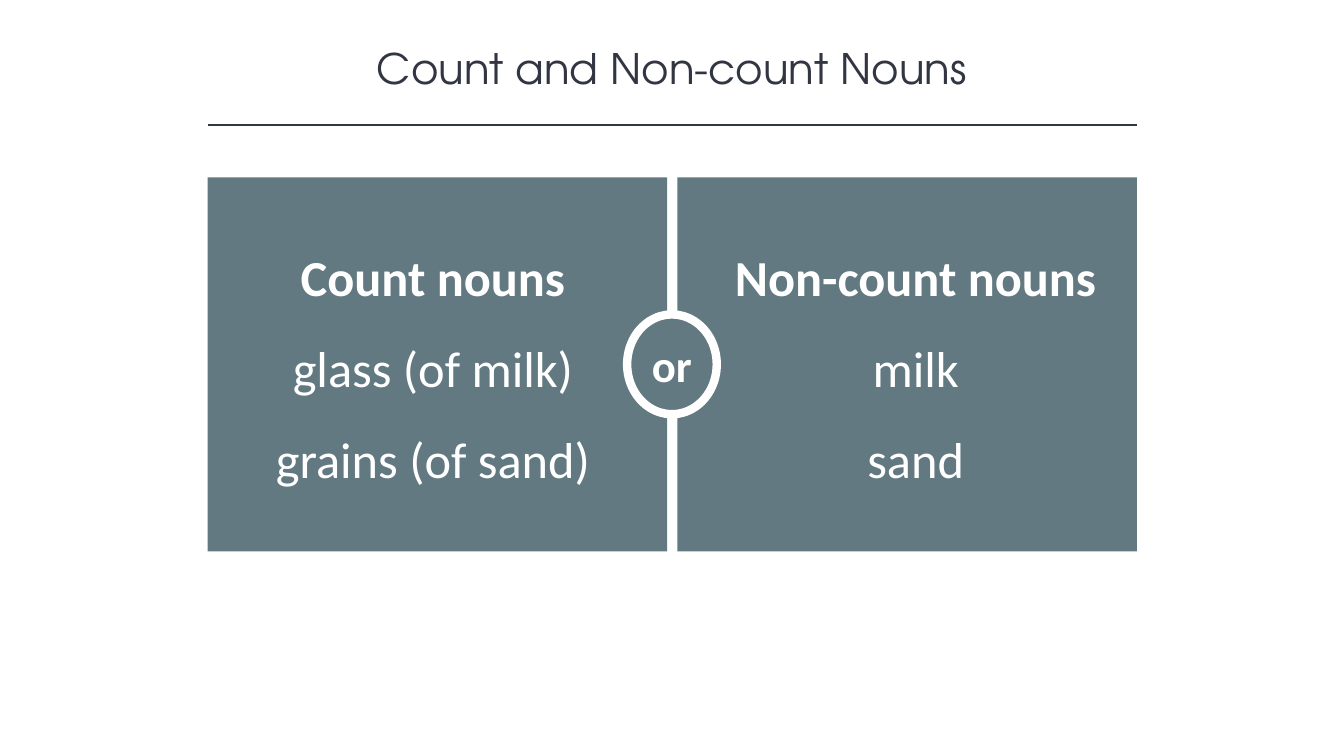
"""Build a slide that contrasts count nouns with non-count nouns."""
import pptx
import pptx.dml.color
import pptx.enum.shapes
import pptx.enum.text
import pptx.oxml
import pptx.oxml.ns
import pptx.util

Pt = pptx.util.Pt
RGBColor = pptx.dml.color.RGBColor
SHAPE = pptx.enum.shapes.MSO_SHAPE
MIDDLE = pptx.enum.text.MSO_ANCHOR.MIDDLE
CENTER = pptx.enum.text.PP_ALIGN.CENTER

INK = RGBColor(0x32, 0x35, 0x42)
SLATE = RGBColor(0x62, 0x79, 0x81)
WHITE = RGBColor(0xFF, 0xFF, 0xFF)

PANEL_LEFT, PANEL_TOP = 148.3, 126.7
PANEL_WIDTH, PANEL_HEIGHT = 328.3, 267.1
PANEL_STEP = 335.5
PANEL_RIGHT = PANEL_LEFT + PANEL_STEP + PANEL_WIDTH
RULE_TOP = 89.3


def write_lines(shape, lines, font_format, line_spacing=1.0):
    """Fill a shape with centred lines, the first one styled as a heading."""
    frame = shape.text_frame
    frame.word_wrap = True
    frame.vertical_anchor = MIDDLE
    frame.margin_left = frame.margin_right = 0
    frame.text = "\n".join(lines)
    for index, paragraph in enumerate(frame.paragraphs):
        paragraph.alignment = CENTER
        paragraph.line_spacing = line_spacing
        for name, value in font_format.items():
            if name == "color":
                paragraph.font.color.rgb = value
            else:
                setattr(paragraph.font, name, value)
        if index > 0:
            paragraph.font.bold = False


def add_filled_shape(shapes, preset, left, top, width, height):
    """Add a flat slate shape without an outline."""
    shape = shapes.add_shape(preset, Pt(left), Pt(top), Pt(width), Pt(height))
    shape.shadow.inherit = False
    shape.fill.solid()
    shape.fill.fore_color.rgb = SLATE
    shape.line.fill.background()
    return shape


presentation = pptx.Presentation()
presentation.slide_width = Pt(960)
presentation.slide_height = Pt(540)
slide = presentation.slides.add_slide(presentation.slide_layouts[6])

title = slide.shapes.add_textbox(Pt(120), Pt(26.6), Pt(720), Pt(44))
title_format = {"name": "TeX Gyre Adventor", "size": Pt(30), "bold": False, "color": INK}
write_lines(title, ["Count and Non-count Nouns"], title_format)

rule = slide.shapes.add_connector(
    pptx.enum.shapes.MSO_CONNECTOR.STRAIGHT,
    Pt(PANEL_LEFT), Pt(RULE_TOP), Pt(PANEL_RIGHT), Pt(RULE_TOP))
rule.line.color.rgb = INK
rule.line.width = Pt(1)
rule._element.spPr.append(pptx.oxml.parse_xml(
    f"<a:effectLst {pptx.oxml.ns.nsdecls('a')}/>"))

comparison = slide.shapes.add_group_shape().shapes
for column in range(2):
    add_filled_shape(comparison, SHAPE.RECTANGLE, PANEL_LEFT + column * PANEL_STEP,
                     PANEL_TOP, PANEL_WIDTH, PANEL_HEIGHT)

badge = add_filled_shape(comparison, SHAPE.OVAL, 448, 224.6, 64, 71.3)
badge.line.color.rgb = WHITE
badge.line.width = Pt(6)
badge_format = {"name": "Calibri", "size": Pt(32), "bold": True, "color": WHITE}
write_lines(badge, ["or"], badge_format)

columns = [
    (178.6, 261.4, ["Count nouns", "glass (of milk)", "grains (of sand)"]),
    (516.2, 275.8, ["Non-count nouns", "milk", "sand"]),
]
for left, width, lines in columns:
    column_text = comparison.add_textbox(Pt(left), Pt(149.8), Pt(width), Pt(203.8))
    write_lines(column_text, lines, {**badge_format, "size": Pt(36)}, 1.5)

presentation.save("out.pptx")
